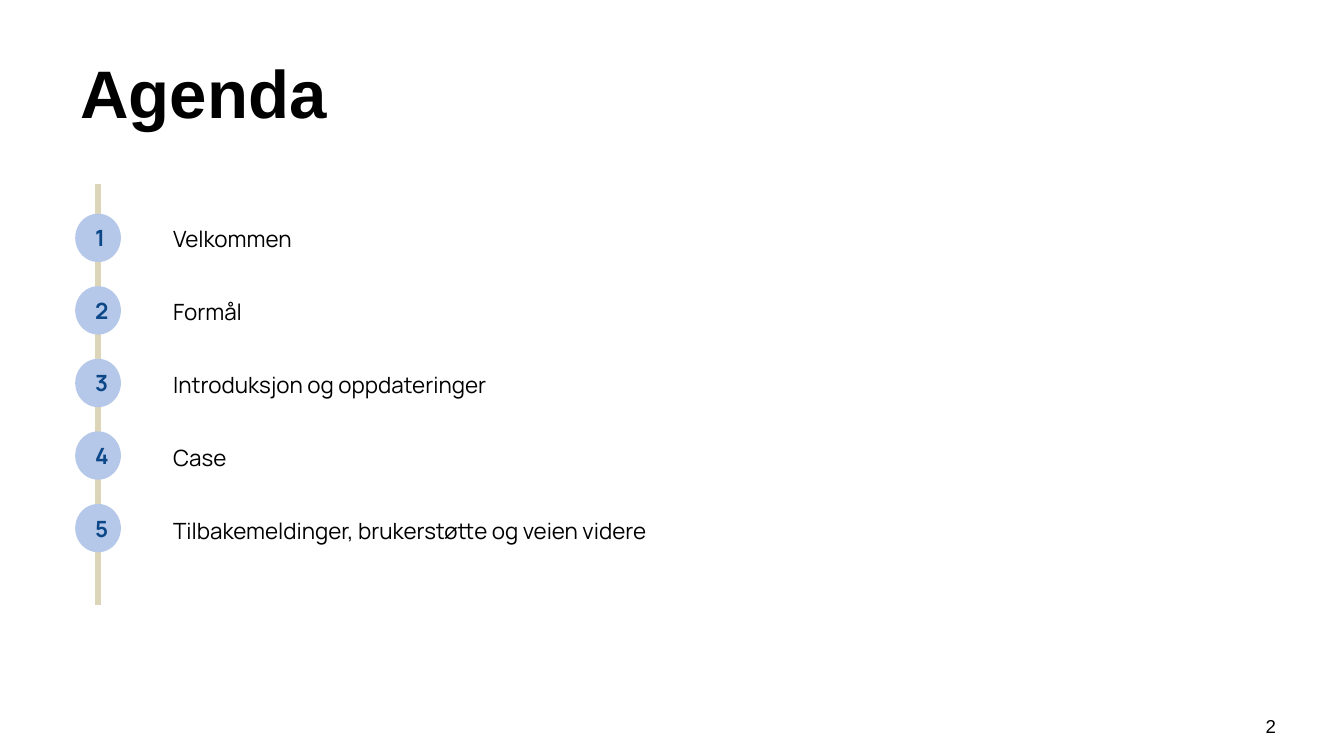
from lxml.etree import SubElement
from pptx import Presentation
from pptx.dml.color import RGBColor
from pptx.enum.shapes import MSO_CONNECTOR, MSO_SHAPE
from pptx.enum.text import MSO_ANCHOR, PP_ALIGN
from pptx.oxml.ns import qn
from pptx.util import Inches, Pt

TITLE = "Agenda"
PAGE_NUMBER = "2"
TOPICS = [
    "Velkommen",
    "Formål",
    "Introduksjon og oppdateringer",
    "Case",
    "Tilbakemeldinger, brukerstøtte og veien videre",
]

BLACK = RGBColor(0x00, 0x00, 0x00)
NAVY = RGBColor(0x0C, 0x47, 0x88)
LIGHT_BLUE = RGBColor(0xB6, 0xC8, 0xE9)
SAND = RGBColor(0xDC, 0xD5, 0xB8)

# Geometry in inches
SLIDE_W = 10
SLIDE_H = SLIDE_W * 9 / 16
AXIS_X, AXIS_TOP, AXIS_BOTTOM = 0.73, 1.37, 4.5
MARKER_W, MARKER_H = 0.34, 0.36
FIRST_MARKER, MARKER_PITCH = 1.59, 0.54
TOPIC_LEFT, TOPIC_W, TOPIC_H = 1.19, 6.9, 0.3
FIRST_TOPIC, LAST_TOPIC = 1.63, 3.8
TOPIC_PITCH = (LAST_TOPIC - FIRST_TOPIC) / (len(TOPICS) - 1)


def write(shape, text, size, font, color=BLACK, bold=False,
          align=PP_ALIGN.LEFT, anchor=MSO_ANCHOR.TOP):
    frame = shape.text_frame
    frame.word_wrap = True
    frame.vertical_anchor = anchor
    frame.text = text
    paragraph = frame.paragraphs[0]
    paragraph.alignment = align
    run_font = paragraph.runs[0].font
    run_font.size, run_font.name, run_font.bold = Pt(size), font, bold
    run_font.color.rgb = color


def add_text(slide, left, top, width, height, *args, **kwargs):
    box = slide.shapes.add_textbox(
        Inches(left), Inches(top), Inches(width), Inches(height))
    write(box, *args, **kwargs)


prs = Presentation()
prs.slide_width, prs.slide_height = Inches(SLIDE_W), Inches(SLIDE_H)
slide = prs.slides.add_slide(prs.slide_layouts[6])

# Page number and title
add_text(slide, 9.27, 5.27, 0.37, 0.3, PAGE_NUMBER, 10, "Arial",
         align=PP_ALIGN.CENTER)
add_text(slide, 0.5, 0.33, 8.33, 0.71, TITLE, 36, "Arial", bold=True,
         anchor=MSO_ANCHOR.MIDDLE)

# Vertical timeline
axis = slide.shapes.add_connector(
    MSO_CONNECTOR.STRAIGHT, Inches(AXIS_X), Inches(AXIS_TOP),
    Inches(AXIS_X), Inches(AXIS_BOTTOM))
axis.line.color.rgb = SAND
axis.line.width = Pt(3)
SubElement(axis.element.spPr, qn("a:effectLst"))

# Numbered markers with their topics
for index, topic in enumerate(TOPICS):
    marker = slide.shapes.add_shape(
        MSO_SHAPE.OVAL, Inches(AXIS_X - MARKER_W / 2),
        Inches(FIRST_MARKER + index * MARKER_PITCH),
        Inches(MARKER_W), Inches(MARKER_H))
    marker.shadow.inherit = False
    marker.fill.solid()
    marker.fill.fore_color.rgb = LIGHT_BLUE
    marker.line.fill.background()
    write(marker, str(index + 1), 12, "Manrope", NAVY, True,
          PP_ALIGN.CENTER, MSO_ANCHOR.MIDDLE)
    add_text(slide, TOPIC_LEFT, FIRST_TOPIC + index * TOPIC_PITCH,
             TOPIC_W, TOPIC_H, topic, 12, "Manrope")

prs.save("out.pptx")
